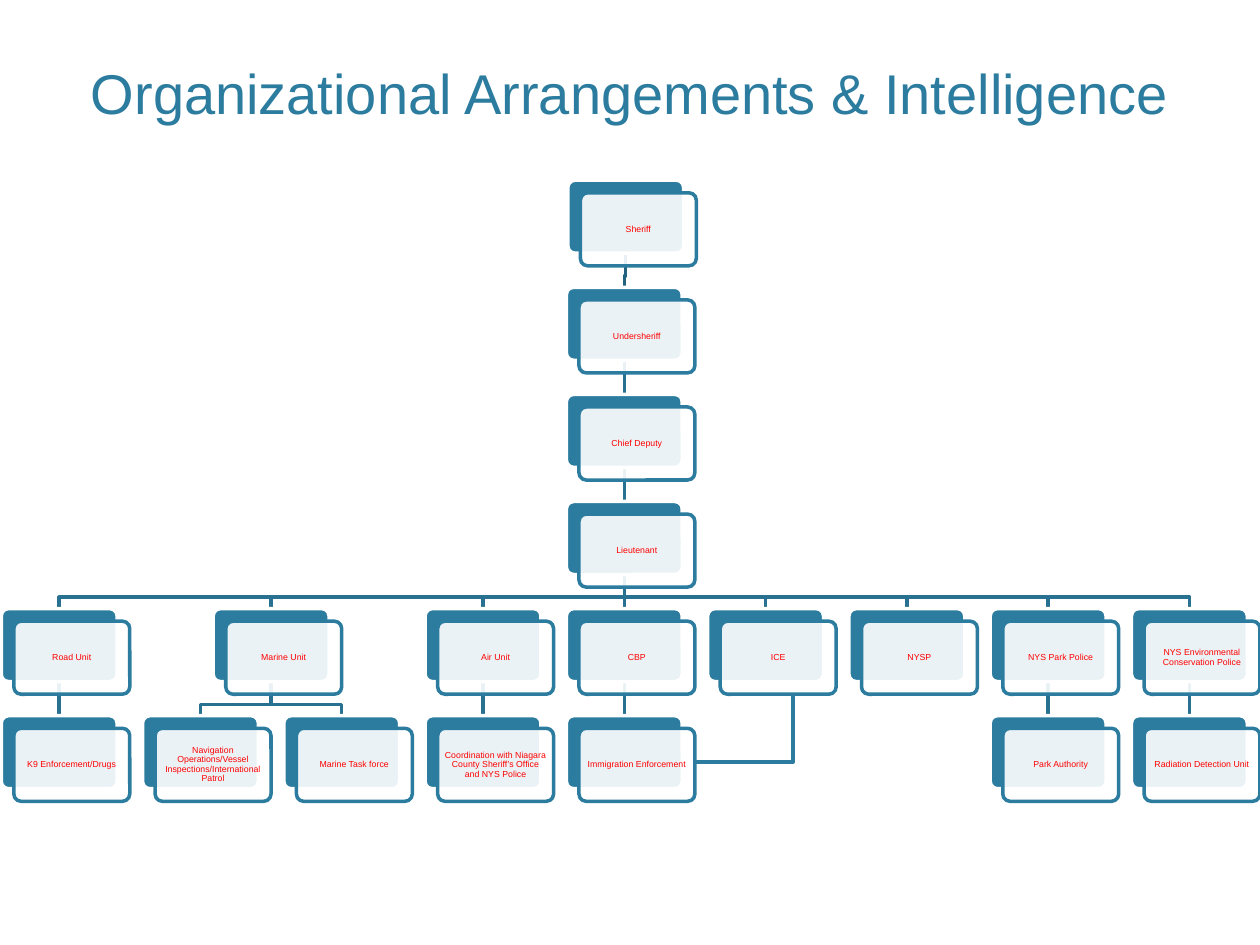
from lxml import etree
from pptx import Presentation
from pptx.dml.color import RGBColor
from pptx.enum import shapes, text
from pptx.oxml import ns
from pptx.util import Inches, Pt

TEAL, LINK, TOP_LINK, WHITE, RED = "2C7C9F", "287190", "23637F", "FFFFFF", "FF0000"
CARD_WIDTH, CARD_HEIGHT = 0.92, 0.58
CARD_OFFSET = 0.1
LEFT, TOP = 0.01, 1.43
COLUMN_STEP, ROW_STEP = 8.97 / 8, 0.85
ELBOW_DROP = 0.18

# Each unit is (label, column, subordinates); its depth gives the row.
UNITS = [
    ("Road Unit", 0, [("K9 Enforcement/Drugs", 0, [])]),
    ("Marine Unit", 1.5, [
        ("Navigation Operations/Vessel Inspections/International Patrol", 1, []),
        ("Marine Task force", 2, []),
    ]),
    ("Air Unit", 3, [
        ("Coordination with Niagara County Sheriff’s Office and NYS Police", 3, []),
    ]),
    ("CBP", 4, [("Immigration Enforcement", 4, [])]),
    ("ICE", 5, []),
    ("NYSP", 6, []),
    ("NYS Park Police", 7, [("Park Authority", 7, [])]),
    ("NYS Environmental Conservation Police", 8, [("Radiation Detection Unit", 8, [])]),
]
COMMAND = ("Sheriff", 4.01, [
    ("Undersheriff", 4, [("Chief Deputy", 4, [("Lieutenant", 4, UNITS)])]),
])


def color(value):
    return RGBColor.from_string(value)


def apply(target, values):
    for name, value in values.items():
        setattr(target, name, value)


def style_line(line, value):
    line.color.rgb = color(value)
    line.width = Pt(2)


def card_left(column):
    return LEFT + column * COLUMN_STEP


def card_top(row):
    return TOP + row * ROW_STEP


def add_connector(slide, kind, points, line_color):
    ends = [Inches(value) for point in points for value in point]
    connector = slide.shapes.add_connector(kind, *ends)
    style_line(connector.line, line_color)
    etree.SubElement(connector._element.spPr, ns.qn("a:effectLst"))
    return connector


def add_polyline(slide, points, line_color):
    start, *rest = [(Inches(x), Inches(y)) for x, y in points]
    builder = slide.shapes.build_freeform(*start)
    builder.add_line_segments(rest, close=False)
    shape = builder.convert_to_shape()
    shape.shadow.inherit = False
    shape.fill.background()
    style_line(shape.line, line_color)


def add_link(slide, parent_column, child_column, parent_row):
    """Join the bottom of a card to the top of one in the next row."""
    start_x, end_x = (card_left(c) + CARD_WIDTH / 2 for c in (parent_column, child_column))
    start_y, end_y = card_top(parent_row) + CARD_HEIGHT, card_top(parent_row + 1)
    start, end = (start_x, start_y), (end_x, end_y)
    if parent_column == child_column:
        add_connector(slide, shapes.MSO_CONNECTOR.STRAIGHT, [start, end], LINK)
    else:
        turn = start_y + ELBOW_DROP
        add_polyline(slide, [start, (start_x, turn), (end_x, turn), end],
                     LINK if parent_row else TOP_LINK)


def add_links(slide, unit, row=0):
    _, column, subordinates = unit
    for subordinate in subordinates:
        add_links(slide, subordinate, row + 1)
        add_link(slide, column, subordinate[1], row)


def add_panel(slide, left, top, fill, line):
    panel = slide.shapes.add_shape(
        shapes.MSO_SHAPE.ROUNDED_RECTANGLE,
        Inches(left), Inches(top), Inches(CARD_WIDTH), Inches(CARD_HEIGHT))
    panel.shadow.inherit = False
    panel.adjustments[0] = 0.1
    panel.fill.solid()
    panel.fill.fore_color.rgb = color(fill)
    style_line(panel.line, line)
    return panel


def set_opacity(shape, percent):
    fill_color = shape._element.spPr.find(ns.qn("a:solidFill"))[0]
    etree.SubElement(fill_color, ns.qn("a:alpha"), val=str(percent * 1000))


def write_text(shape, words, size, value, frame_format):
    frame = shape.text_frame
    frame.text = words
    apply(frame, {"word_wrap": True, "auto_size": text.MSO_AUTO_SIZE.NONE, **frame_format})
    paragraph = frame.paragraphs[0]
    paragraph.alignment = text.PP_ALIGN.CENTER
    font = paragraph.runs[0].font
    apply(font, {"name": "Arial", "size": Pt(size)})
    font.color.rgb = color(value)
    return paragraph


def add_card(slide, label, column, row):
    left, top = card_left(column), card_top(row)
    add_panel(slide, left, top, TEAL, WHITE)
    front = add_panel(slide, left + CARD_OFFSET, top + CARD_OFFSET, WHITE, TEAL)
    set_opacity(front, 90)
    margins = {f"margin_{side}": Inches(0.04) for side in ("left", "top", "right", "bottom")}
    paragraph = write_text(front, label, 5, RED,
                           {"vertical_anchor": text.MSO_ANCHOR.MIDDLE, **margins})
    paragraph.line_spacing = 0.9


def add_cards(slide, unit, row=0):
    label, column, subordinates = unit
    add_card(slide, label, column, row)
    for subordinate in subordinates:
        add_cards(slide, subordinate, row + 1)


def add_cross_link(slide):
    """Join ICE to Immigration Enforcement, turning just below ICE."""
    connector = add_connector(slide, shapes.MSO_CONNECTOR.ELBOW,
                              [(6.3, 5.52), (5.5, 6.05)], TEAL)
    geometry = connector._element.spPr.find(ns.qn("a:prstGeom"))
    guides = geometry.find(ns.qn("a:avLst"))
    etree.SubElement(guides, ns.qn("a:gd"), name="adj1", fmla="val 700")


def set_title(slide, words):
    title = slide.shapes.title
    apply(title, {"left": Inches(0.6), "top": Inches(0.12),
                  "width": Inches(8.8), "height": Inches(0.93)})
    write_text(title, words, 32, TEAL, {"vertical_anchor": text.MSO_ANCHOR.BOTTOM})


def main():
    presentation = Presentation()
    apply(presentation, {"slide_width": Inches(10), "slide_height": Inches(7.5)})
    slide = presentation.slides.add_slide(presentation.slide_layouts[5])
    set_title(slide, "Organizational Arrangements & Intelligence")
    add_links(slide, COMMAND)
    add_cards(slide, COMMAND)
    add_cross_link(slide)
    presentation.save("out.pptx")


if __name__ == "__main__":
    main()
